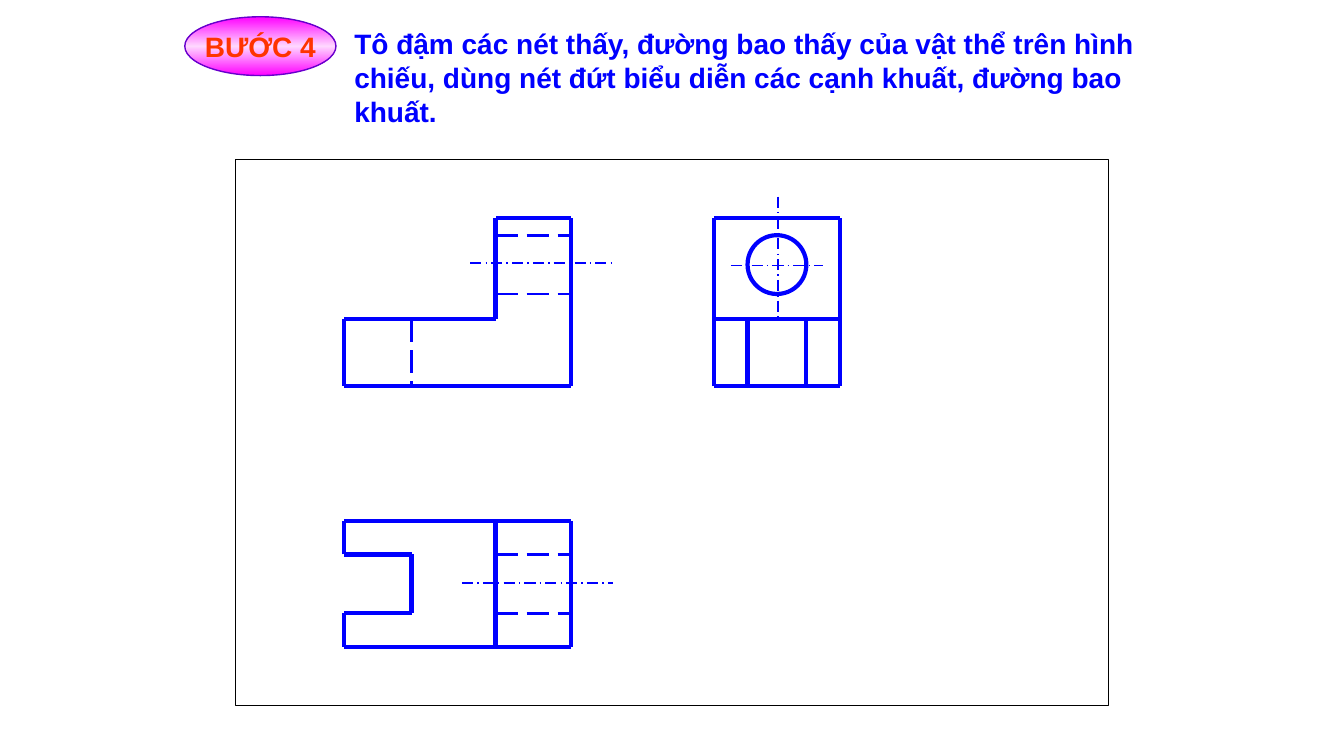
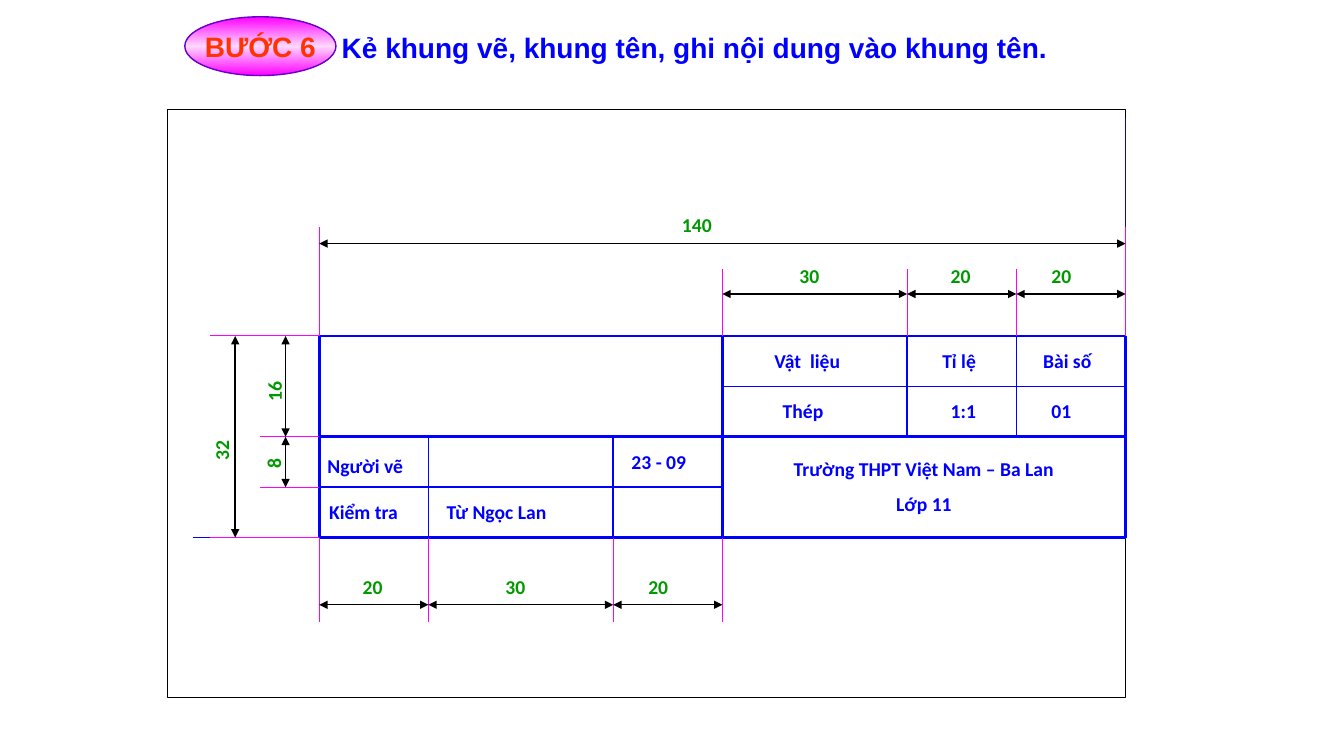
from copy import deepcopy
from itertools import pairwise
from lxml import etree
from pptx import Presentation, util as u
from pptx.dml.color import RGBColor
from pptx.enum import dml, shapes, text
from pptx.oxml.ns import qn

PX = 7620
BLUE = RGBColor(0, 0, 255)
PINK = RGBColor(255, 0, 255)
PALE = RGBColor(255, 215, 255)
PLUM = RGBColor(102, 0, 204)
RED = RGBColor(255, 51, 0)
GREEN = RGBColor(0, 153, 0)
BLACK = RGBColor(0, 0, 0)
WHITE = RGBColor(255, 255, 255)
DASH = dml.MSO_LINE.LONG_DASH
AXIS = dml.MSO_LINE.LONG_DASH_DOT


def stroke(page, ends, color, width, dash=None, arrows=False):
    line = page.shapes.add_connector(
        shapes.MSO_CONNECTOR.STRAIGHT, *[n * PX for n in ends])
    line.line.color.rgb = color
    line.line.width = u.Pt(width)
    if dash:
        line.line.dash_style = dash
    if arrows:
        for tag in ("a:headEnd", "a:tailEnd"):
            etree.SubElement(line.line._get_or_add_ln(), qn(tag), type="triangle")
    etree.SubElement(line._element.spPr, qn("a:effectLst"))


def label(page, box, lines, color, size=14, font="Calibri", align=None, turn=0):
    area = page.shapes.add_textbox(*[n * PX for n in box])
    area.rotation = turn
    frame = area.text_frame
    frame.word_wrap = True
    for i, words in enumerate(lines):
        para = frame.paragraphs[0] if i == 0 else frame.add_paragraph()
        para.alignment = align
        if i:
            para.space_before = u.Pt(size * 0.6)
        run = para.add_run()
        run.text = words
        run.font.size = u.Pt(size)
        run.font.name = font
        run.font.bold = True
        run.font.color.rgb = color


deck = Presentation()
deck.slide_width = 1600 * PX
deck.slide_height = 900 * PX

heads = [
    ("BƯỚC 4", (410, 26, 960, 133), (280, 190, 1040, 650),
     "Tô đậm các nét thấy, đường bao thấy của vật thể trên hình chiếu, "
     "dùng nét đứt biểu diễn các cạnh khuất, đường bao khuất."),
    ("BƯỚC 6", (395, 30, 1010, 53), (200, 130, 1140, 700),
     "Kẻ khung vẽ, khung tên, ghi nội dung vào khung tên."),
]
pages = []
for step, box, sheet, title in heads:
    page = deck.slides.add_slide(deck.slide_layouts[6])
    pages.append(page)
    label(page, box, [title], BLUE, 20, "Arial")

    badge = page.shapes.add_shape(
        shapes.MSO_SHAPE.OVAL, 220 * PX, 20 * PX, 180 * PX, 70 * PX)
    badge.shadow.inherit = False
    badge.fill.gradient()
    badge.fill.gradient_angle = 270
    first, last = badge.fill.gradient_stops
    first.color.rgb = last.color.rgb = PINK
    first.position, last.position = 0, 1
    first._gs.addnext(deepcopy(first._gs))
    mid = badge.fill.gradient_stops[1]
    mid.color.rgb = PALE
    mid.position = 0.5
    badge.line.color.rgb = PLUM
    badge.line.width = u.Pt(1)
    frame = badge.text_frame
    frame.word_wrap = False
    frame.vertical_anchor = text.MSO_ANCHOR.MIDDLE
    frame.paragraphs[0].alignment = text.PP_ALIGN.CENTER
    run = frame.paragraphs[0].add_run()
    run.text = step
    run.font.size = u.Pt(20)
    run.font.name = "Arial"
    run.font.bold = True
    run.font.color.rgb = RED

    border = page.shapes.add_shape(
        shapes.MSO_SHAPE.RECTANGLE, *[n * PX for n in sheet])
    border.shadow.inherit = False
    border.fill.solid()
    border.fill.fore_color.rgb = WHITE
    border.line.color.rgb = BLACK
    border.line.width = u.Pt(0.75)

views, block = pages

front = [(410, 460), (680, 460), (680, 260), (590, 260), (590, 380),
         (410, 380), (410, 460)]
top = [(410, 620), (680, 620), (680, 770), (410, 770), (410, 730),
       (490, 730), (490, 660), (410, 660), (410, 620)]
side = [(850, 260), (1000, 260), (1000, 460), (850, 460), (850, 260)]
inner = [[(590, 620), (590, 770)], [(850, 380), (1000, 380)],
         [(890, 380), (890, 460)], [(960, 380), (960, 460)]]
for chain in [front, top, side, *inner]:
    for a, b in pairwise(chain):
        stroke(views, a + b, BLUE, 3)

stroke(views, (490, 380, 490, 460), BLUE, 2, DASH)
for y in (280, 350, 660, 730):
    stroke(views, (590, y, 680, y), BLUE, 2, DASH)

hole = views.shapes.add_shape(
    shapes.MSO_SHAPE.OVAL, 890 * PX, 280 * PX, 70 * PX, 70 * PX)
hole.shadow.inherit = False
hole.fill.solid()
hole.fill.fore_color.rgb = WHITE
hole.line.color.rgb = BLUE
hole.line.width = u.Pt(3)

for ends in [(926, 234, 926, 378), (870, 316, 980, 316),
             (560, 313, 730, 313), (550, 694, 730, 694)]:
    stroke(views, ends, BLUE, 1, AXIS)

for y in (400, 520, 640):
    stroke(block, (380, y, 1340, y), BLUE, 2)
for x in (380, 860, 1340):
    stroke(block, (x, 400, x, 640), BLUE, 2)

stroke(block, (380, 580, 860, 580), BLUE, 1)
stroke(block, (860, 460, 1340, 460), BLUE, 1)
for x, y in [(510, 520), (730, 520), (1080, 400), (1210, 400)]:
    stroke(block, (x, y, x, y + 120), BLUE, 1)
stroke(block, (1340, 140, 1340, 640), BLUE, 1)
stroke(block, (1340, 640, 230, 640), BLUE, 1)

low = [380, 510, 730, 860]
high = [860, 1080, 1210, 1340]
for x in low:
    stroke(block, (x, 640, x, 740), PINK, 0.75)
for x, y in [(380, 270), (860, 320), (1080, 320), (1210, 320), (1340, 270)]:
    stroke(block, (x, y, x, 400), PINK, 0.75)
for x, y in [(250, 400), (310, 520), (310, 580), (250, 640)]:
    stroke(block, (380, y, x, y), PINK, 0.75)

for y, stops in [(290, [380, 1340]), (350, high), (720, low)]:
    for a, b in pairwise(stops):
        stroke(block, (a, y, b, y), BLACK, 1, arrows=True)
for x, stops in [(280, [400, 640]), (340, [400, 520, 580])]:
    for a, b in pairwise(stops):
        stroke(block, (x, a, x, b), BLACK, 1, arrows=True)

cells = [
    (378, 534, 140, "Người vẽ"), (740, 530, 120, "23 - 09"),
    (380, 589, 140, "Kiểm tra"), (520, 589, 200, "Từ Ngọc Lan"),
    (910, 409, 140, "Vật  liệu"), (920, 469, 120, "Thép"),
    (1110, 409, 110, "Tỉ lệ"), (1120, 469, 70, "1:1"),
    (1230, 409, 110, "Bài số"), (1240, 469, 70, "01"),
]
for x, y, w, words in cells:
    label(block, (x, y, w, 41), [words], BLUE)
label(block, (860, 538, 480, 83), ["Trường THPT Việt Nam – Ba Lan", "Lớp 11"],
      BLUE, align=text.PP_ALIGN.CENTER)

sizes = [
    (800, 248, 90, "140", 0),
    (940, 308, 70, "30", 0), (1120, 308, 70, "20", 0), (1240, 308, 70, "20", 0),
    (420, 678, 70, "20", 0), (590, 678, 70, "30", 0), (760, 678, 70, "20", 0),
    (229, 505, 70, "32", 270), (292, 434, 70, "16", 270), (301, 524, 50, "8", 270),
]
for x, y, w, words, turn in sizes:
    label(block, (x, y, w, 41), [words], GREEN, turn=turn)

deck.save("out.pptx")
